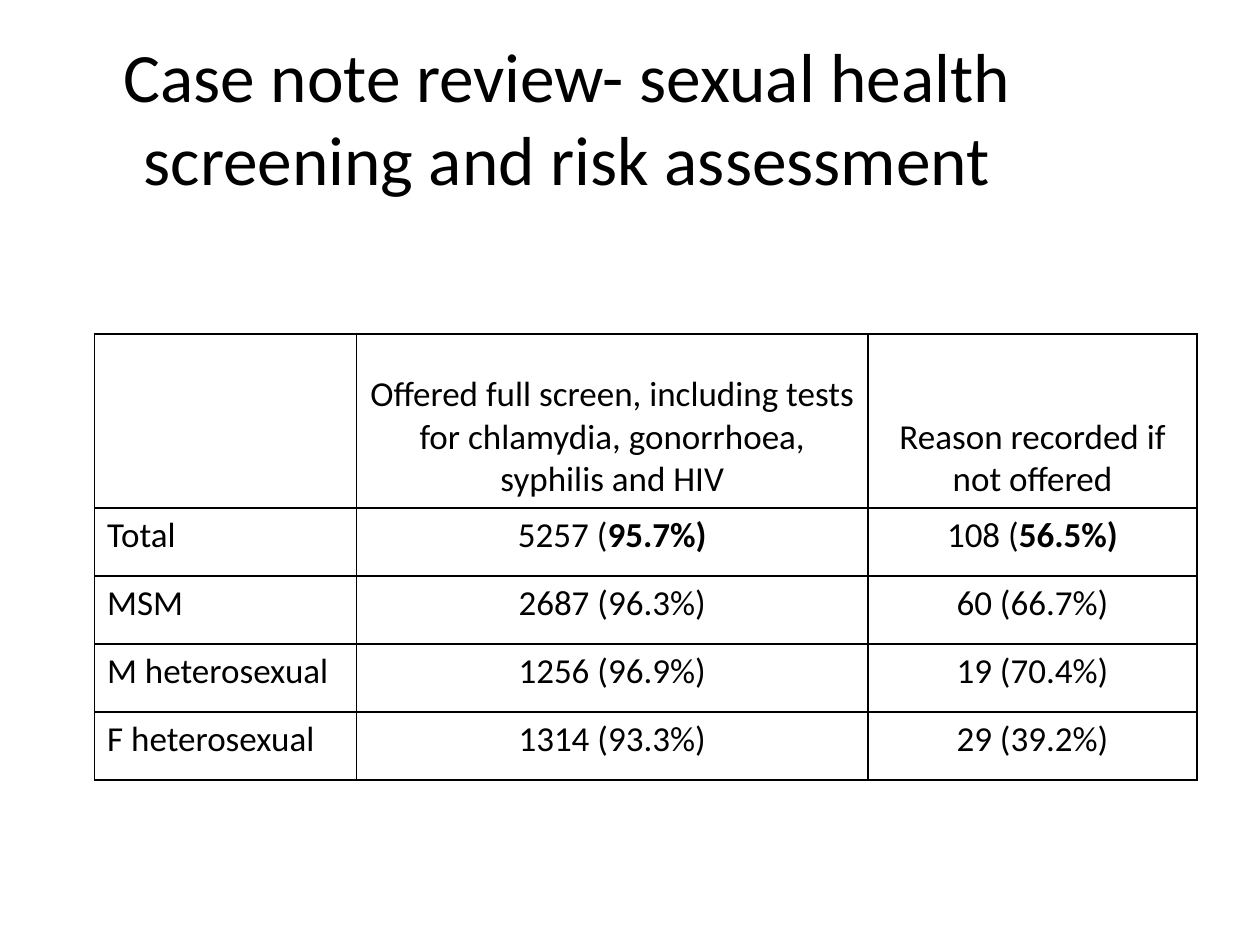
from dataclasses import dataclass

from lxml.etree import SubElement
from pptx import Presentation
from pptx.dml.color import RGBColor
from pptx.enum.text import MSO_ANCHOR, PP_ALIGN
from pptx.oxml.ns import qn
from pptx.util import Inches, Pt


@dataclass(frozen=True)
class Theme:
    font: str = "Calibri"
    ink: str = "000000"
    title_size: float = 39.6
    table_size: float = 20
    border_width: float = 1


THEME = Theme()
TITLE = "Case note review- sexual health screening and risk assessment"
COLUMN_WIDTHS = [2.08, 4.06, 2.61]
ROW_HEIGHTS = [1.38] + [0.54] * 4

# Each cell is a pair: plain text, then bold text
ROWS = [
    [
        ("", ""),
        ("Offered full screen, including tests for chlamydia, gonorrhoea, syphilis and HIV", ""),
        ("Reason recorded if not offered", ""),
    ],
    [("Total", ""), ("5257 (", "95.7%)"), ("108 (", "56.5%)")],
    [("MSM", ""), ("2687 (96.3%)", ""), ("60 (66.7%)", "")],
    [("M heterosexual", ""), ("1256 (96.9%)", ""), ("19 (70.4%)", "")],
    [("F heterosexual", ""), ("1314 (93.3%)", ""), ("29 (39.2%)", "")],
]


def set_attributes(target, values):
    for name, value in values.items():
        setattr(target, name, value)


def add_run(paragraph, text, size, bold=False):
    run = paragraph.add_run()
    run.text = text
    set_attributes(run.font, {"name": THEME.font, "size": Pt(size), "bold": bold})
    run.font.color.rgb = RGBColor.from_string(THEME.ink)


def add_title(slide):
    shape = slide.shapes.add_textbox(Inches(0), Inches(0.3), Inches(9), Inches(1.25))
    set_attributes(shape.text_frame, {"word_wrap": True, "vertical_anchor": MSO_ANCHOR.MIDDLE})
    paragraph = shape.text_frame.paragraphs[0]
    paragraph.alignment = PP_ALIGN.CENTER
    add_run(paragraph, TITLE, THEME.title_size)


def draw_borders(cell):
    properties = cell._tc.get_or_add_tcPr()
    for side in ("a:lnL", "a:lnR", "a:lnT", "a:lnB"):
        line = SubElement(properties, qn(side), w=str(Pt(THEME.border_width)))
        fill = SubElement(line, qn("a:solidFill"))
        SubElement(fill, qn("a:srgbClr"), val=THEME.ink)


def fill_cell(cell, parts, is_header, is_label):
    draw_borders(cell)
    cell.fill.background()
    cell.vertical_anchor = MSO_ANCHOR.BOTTOM if is_header else MSO_ANCHOR.TOP
    paragraph = cell.text_frame.paragraphs[0]
    paragraph.alignment = PP_ALIGN.LEFT if is_label else PP_ALIGN.CENTER
    for text, bold in zip(parts, (False, True)):
        if text:
            add_run(paragraph, text, THEME.table_size, bold)


def add_screening_table(slide):
    frame = slide.shapes.add_table(
        len(ROWS), len(COLUMN_WIDTHS), Inches(0.75), Inches(2.65),
        Inches(sum(COLUMN_WIDTHS)), Inches(sum(ROW_HEIGHTS)),
    )
    table = frame.table
    set_attributes(table, {"first_row": False, "horz_banding": False})
    for column, width in zip(table.columns, COLUMN_WIDTHS):
        column.width = Inches(width)
    for row_index, (row, height) in enumerate(zip(table.rows, ROW_HEIGHTS)):
        row.height = Inches(height)
        for column_index, parts in enumerate(ROWS[row_index]):
            fill_cell(row.cells[column_index], parts, row_index == 0, column_index == 0)


def main():
    presentation = Presentation()
    set_attributes(presentation, {"slide_width": Inches(10), "slide_height": Inches(7.5)})
    slide = presentation.slides.add_slide(presentation.slide_layouts[6])
    add_title(slide)
    add_screening_table(slide)
    presentation.save("out.pptx")


if __name__ == "__main__":
    main()
